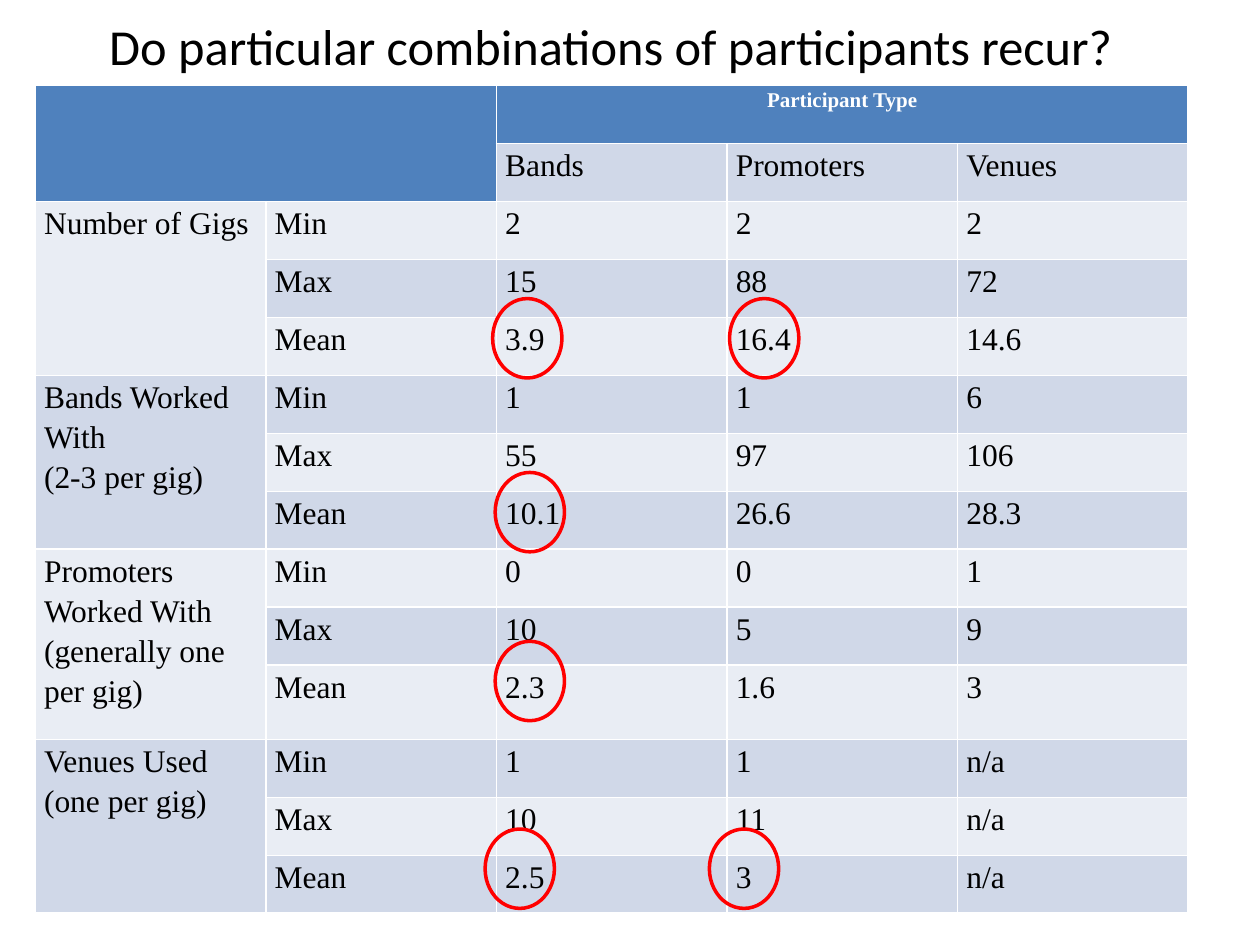
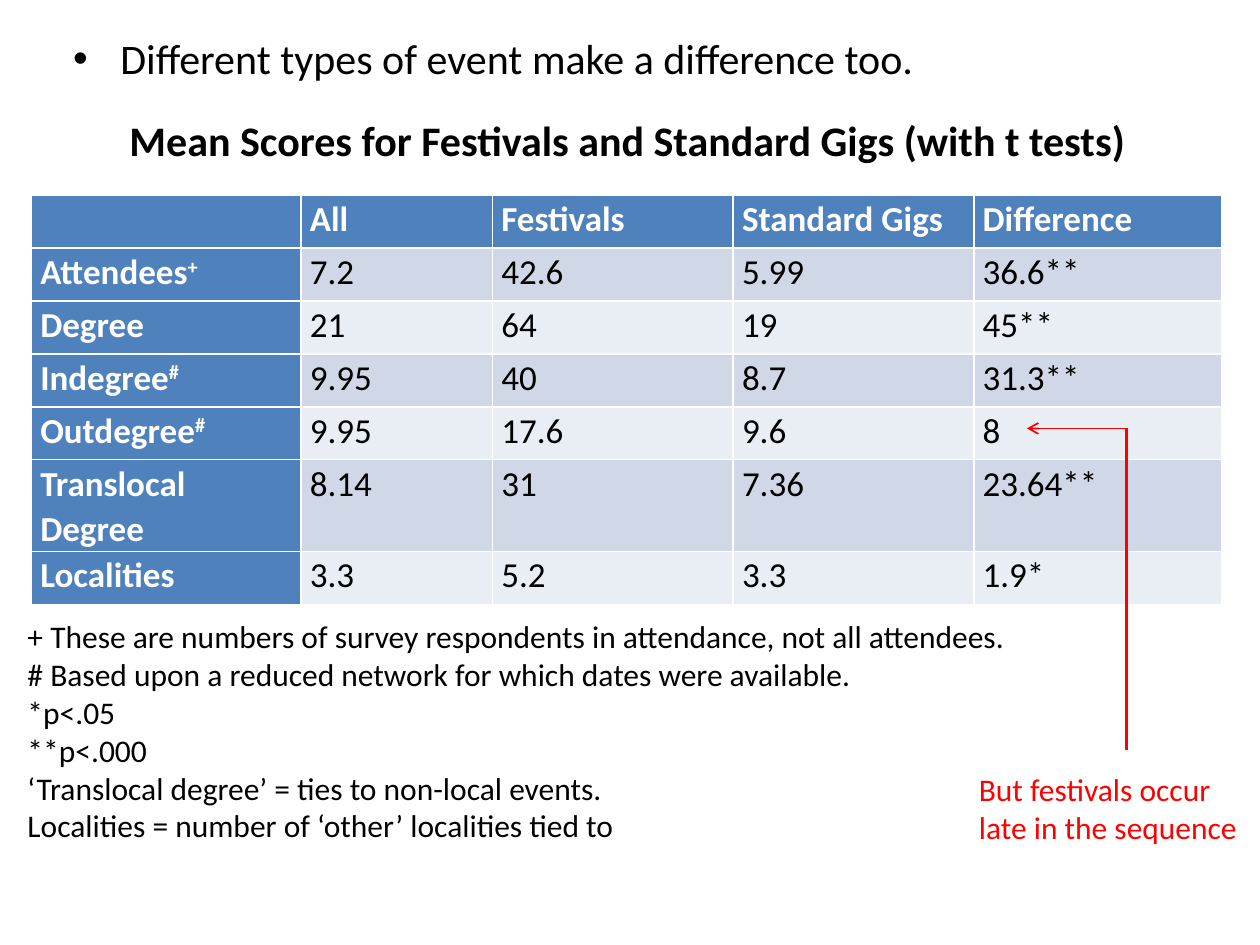
"""Build two slides on recurring participants and on festivals versus standard gigs."""
from dataclasses import dataclass, field
from itertools import product
from typing import NamedTuple

from lxml.etree import SubElement
from pptx import Presentation
from pptx.dml.color import RGBColor
from pptx.enum.shapes import MSO_CONNECTOR, MSO_SHAPE
from pptx.enum.text import MSO_ANCHOR, MSO_AUTO_SIZE, PP_ALIGN
from pptx.oxml.ns import qn
from pptx.util import Inches, Pt

COLORS = {
    "text": "000000",
    "white": "FFFFFF",
    "header": "4F81BD",
    "band_dark": "D0D8E8",
    "band_light": "E9EDF4",
    "mark": "FF0000",
}
SANS = "Calibri"
SERIF = "Times New Roman"
CELL_FRAME = {
    "margin_left": Inches(0.07),
    "margin_right": Inches(0.07),
    "margin_top": 0,
    "margin_bottom": 0,
}


class Box(NamedTuple):
    """A place on the slide in inches."""

    left: float
    top: float
    width: float
    height: float

    def emu(self) -> list:
        """Return the four lengths for python-pptx."""
        return [Inches(v) for v in self]


class Line(NamedTuple):
    """A straight line in inches, with its weight in points."""

    start: tuple
    end: tuple
    weight: float
    arrow: bool = False


@dataclass
class Grid:
    """A banded table; None marks a cell covered by a merge."""

    left: float
    top: float
    cols: list
    heights: list
    rows: list
    font: str
    size: float
    spacing: float
    header_cols: int = 0
    merges: list = field(default_factory=list)


def rgb(name: str) -> RGBColor:
    """Look up a colour by its role."""
    return RGBColor.from_string(COLORS[name])


def set_all(obj, values: dict) -> None:
    """Set every attribute in values on obj."""
    for name, value in values.items():
        setattr(obj, name, value)


def add_run(p, text: str, color: str, **fmt):
    """Add a formatted run to a paragraph."""
    r = p.add_run()
    r.text = text
    set_all(r.font, fmt)
    r.font.color.rgb = rgb(color)
    return r


def write(tf, text: str, color: str, align=None, spacing=None, **fmt) -> None:
    """Write one paragraph a line; what follows a caret is superscript."""
    for i, line in enumerate(text.split("\n")):
        p = tf.paragraphs[0] if i == 0 else tf.add_paragraph()
        set_all(p, {"alignment": align, "line_spacing": spacing})
        base, _, raised = line.partition("^")
        add_run(p, base, color, **fmt)
        if raised:
            r = add_run(p, raised, color, **fmt)
            r._r.get_or_add_rPr().set("baseline", "30000")


def fill_placeholder(sp, box: Box, text: str, size: float, bold=False, **frame) -> None:
    """Move a placeholder and give it its text."""
    set_all(sp, dict(zip(("left", "top", "width", "height"), box.emu())))
    align = frame.pop("align", None)
    set_all(sp.text_frame, {"auto_size": MSO_AUTO_SIZE.NONE, **frame})
    write(sp.text_frame, text, "text", align, name=SANS, size=Pt(size), bold=bold)


def add_title(s, box: Box, text: str, size: float, bold=False) -> None:
    """Fill the title placeholder, centred."""
    fill_placeholder(s.shapes.title, box, text, size, bold,
                     align=PP_ALIGN.CENTER, vertical_anchor=MSO_ANCHOR.MIDDLE)


def add_note(s, box: Box, text: str, color: str, wrap: bool) -> None:
    """Add a text box in the body size."""
    tf = s.shapes.add_textbox(*box.emu()).text_frame
    set_all(tf, {"word_wrap": wrap, "auto_size": MSO_AUTO_SIZE.SHAPE_TO_FIT_TEXT})
    write(tf, text, color, name=SANS, size=Pt(18))


def add_grid(s, grid: Grid):
    """Draw a table with a header row and alternating bands."""
    box = Box(grid.left, grid.top, sum(grid.cols), sum(grid.heights))
    table = s.shapes.add_table(len(grid.heights), len(grid.cols), *box.emu()).table
    table.first_col = grid.header_cols > 0
    for col, width in zip(table.columns, grid.cols):
        col.width = Inches(width)
    for row, height in zip(table.rows, grid.heights):
        row.height = Inches(height)
    for first, last in grid.merges:
        table.cell(*first).merge(table.cell(*last))
    for i, j in product(range(len(grid.heights)), range(len(grid.cols))):
        cell, text = table.cell(i, j), grid.rows[i][j]
        is_header = i == 0 or j < grid.header_cols
        fill = "header" if is_header else "band_dark" if i % 2 else "band_light"
        cell.fill.solid()
        cell.fill.fore_color.rgb = rgb(fill)
        set_all(cell, CELL_FRAME)
        if text:
            write(cell.text_frame, text, "white" if is_header else "text",
                  spacing=grid.spacing, name=grid.font, size=Pt(grid.size),
                  bold=is_header)
    return table


def add_ring(s, left: float, top: float) -> None:
    """Ring a mean value in red."""
    sp = s.shapes.add_shape(MSO_SHAPE.OVAL, *Box(left, top, 0.55, 0.63).emu())
    sp.shadow.inherit = False
    sp.fill.background()
    sp.line.color.rgb = rgb("mark")
    sp.line.width = Pt(2)


def add_line(s, line: Line) -> None:
    """Draw a red line, with an open arrowhead at its end if asked."""
    ends = [Inches(v) for v in line.start + line.end]
    c = s.shapes.add_connector(MSO_CONNECTOR.STRAIGHT, *ends)
    c.line.color.rgb = rgb("mark")
    c.line.width = Pt(line.weight)
    if line.arrow:
        SubElement(c.line._get_or_add_ln(), qn("a:tailEnd"), type="arrow")
    SubElement(c._element.spPr, qn("a:effectLst"))


def build_combinations(prs) -> None:
    """Build the slide on recurring combinations of participants."""
    s = prs.slides.add_slide(prs.slide_layouts[5])
    add_title(s, Box(0.2, 0.13, 9.3, 0.46),
              "Do particular combinations of participants recur?", 28.8)
    groups = {
        "Number of Gigs": ["2 2 2", "15 88 72", "3.9 16.4 14.6"],
        "Bands Worked With\n(2-3 per gig)": ["1 1 6", "55 97 106", "10.1 26.6 28.3"],
        "Promoters Worked With\n(generally one per gig)":
            ["0 0 1", "10 5 9", "2.3 1.6 3"],
        "Venues Used\n(one per gig)": ["1 1 n/a", "10 11 n/a", "2.5 3 n/a"],
    }
    rows = [[None, None, "Participant Type", None, None],
            [None, None, "Bands", "Promoters", "Venues"]]
    merges = [((0, 0), (1, 1)), ((0, 2), (0, 4))]
    for label, values in groups.items():
        merges.append(((len(rows), 0), (len(rows) + 2, 0)))
        for name, line, stat in zip((label, None, None), values, ("Min", "Max", "Mean")):
            rows.append([name, stat, *line.split()])
    heights = [0.46] * 10 + [0.59] + [0.46] * 3
    table = add_grid(s, Grid(0.28, 0.68, [1.83] * 5, heights, rows, SERIF, 18, 1.15,
                             merges=merges))
    p = table.cell(0, 2).text_frame.paragraphs[0]
    p.alignment = PP_ALIGN.CENTER
    p.runs[0].font.size = Pt(12)
    for left, top in [(3.91, 2.37), (3.93, 3.75), (3.93, 5.09), (3.85, 6.58),
                      (5.79, 2.37), (5.63, 6.58)]:
        add_ring(s, left, top)


def build_festivals(prs) -> None:
    """Build the slide comparing festivals with standard gigs."""
    s = prs.slides.add_slide(prs.slide_layouts[1])
    add_title(s, Box(0.48, 0.84, 9, 0.54),
              "Mean Scores for Festivals and Standard Gigs (with t tests)", 24, True)
    fill_placeholder(s.placeholders[1], Box(0.48, 0.21, 9, 0.47),
                     "Different types of event make a difference too.", 24)
    rows = [
        [None, "All", "Festivals", "Standard Gigs", "Difference"],
        ["Attendees^+", "7.2", "42.6", "5.99", "36.6**"],
        ["Degree", "21", "64", "19", "45**"],
        ["Indegree^#", "9.95", "40", "8.7", "31.3**"],
        ["Outdegree^#", "9.95", "17.6", "9.6", "8"],
        ["Translocal Degree", "8.14", "31", "7.36", "23.64**"],
        ["Localities", "3.3", "5.2", "3.3", "1.9*"],
    ]
    add_grid(s, Grid(0.25, 1.55, [2.14, 1.52, 1.91, 1.91, 1.97], [0.42] * len(rows),
                     rows, SANS, 20, 1.07, header_cols=1))
    notes = [
        "+ These are numbers of survey respondents in attendance, not all attendees.",
        "# Based upon a reduced network for which dates were available.",
        "*p<.05",
        "**p<.000",
        "‘Translocal degree’ = ties to non-local events.",
        "Localities = number of ‘other’ localities tied to",
    ]
    add_note(s, Box(0.12, 4.85, 10, 1.92), "\n".join(notes), "text", True)
    corner = (8.94, 3.4)
    add_line(s, Line(corner, (8.15, 3.4), 1, arrow=True))
    add_line(s, Line(corner, (8.94, 5.95), 1.5))
    add_note(s, Box(7.67, 6.06, 2.28, 0.71),
             "But festivals occur\nlate in the sequence", "mark", False)


def main() -> None:
    """Build and save the presentation."""
    prs = Presentation()
    set_all(prs, {"slide_width": Inches(10), "slide_height": Inches(7.5)})
    build_combinations(prs)
    build_festivals(prs)
    prs.save("out.pptx")


if __name__ == "__main__":
    main()
